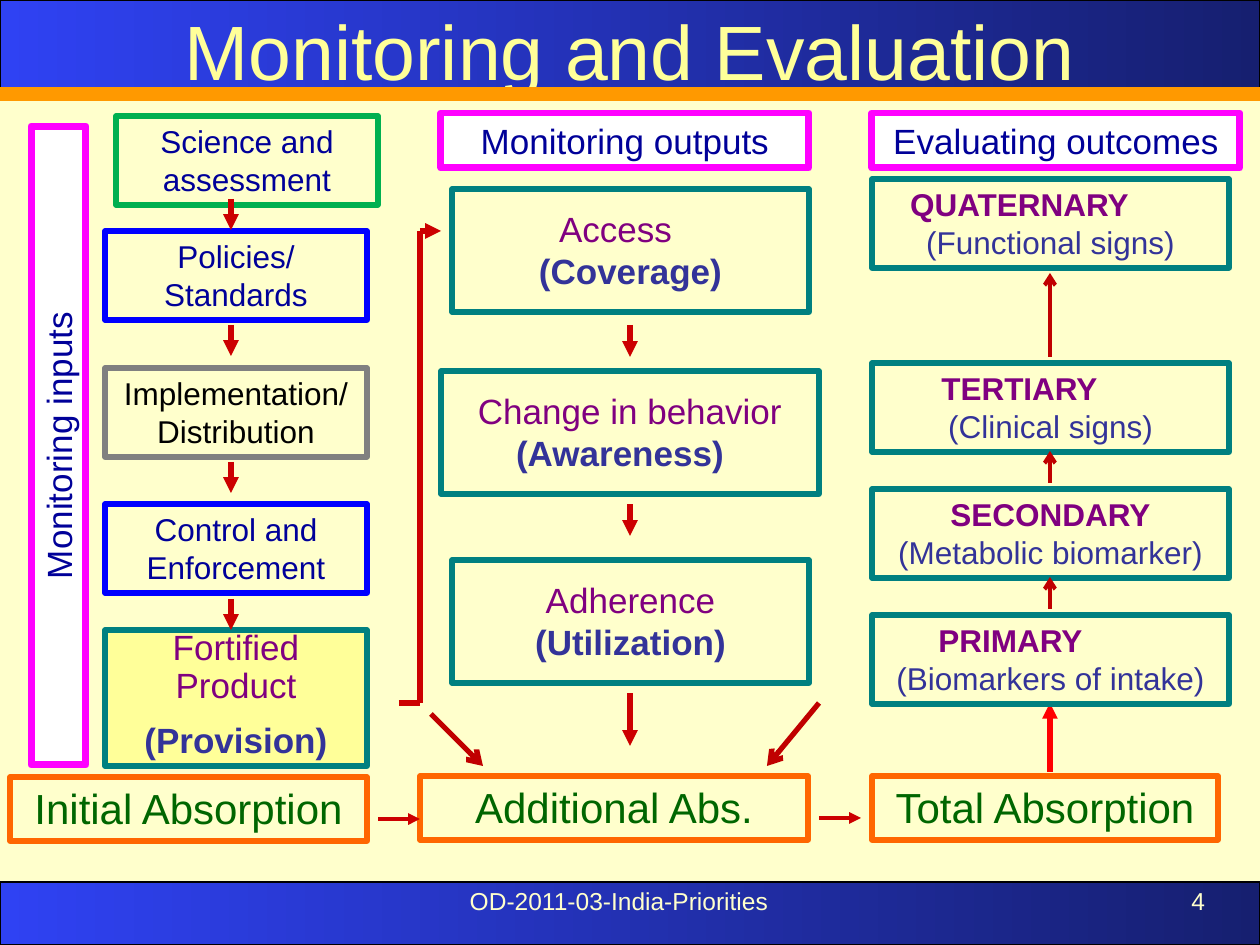
from lxml import etree
from pptx import Presentation
from pptx.dml.color import RGBColor
from pptx.enum.shapes import MSO_CONNECTOR, MSO_SHAPE
from pptx.enum.text import MSO_ANCHOR, PP_ALIGN
from pptx.oxml.ns import qn
from pptx.util import Pt

EMU_PER_PX = 914400 / 126
FONT = "Arial"
COLORS = {
    "cream": "FFFFCC", "yellow": "FFFF99", "white": "FFFFFF", "black": "000000",
    "band_start": "2F42F3", "band_end": "161F70", "rule": "FF9900",
    "orange": "FF6600", "dark_green": "006600", "green": "00B050",
    "teal": "008080", "purple": "800080", "indigo": "333399",
    "magenta": "FF00FF", "navy": "000099", "blue": "0000FF", "gray": "808080",
    "red": "CC0000", "dark_red": "C00000", "bright_red": "FF0000",
}


def px(value):
    return round(value * EMU_PER_PX)


def rgb(name):
    return RGBColor.from_string(COLORS[name])


def add_para(tf, text, size=20, color="navy", bold=False, align=PP_ALIGN.CENTER,
             shift=0, before=0, spacing=None):
    p = tf.paragraphs[0]
    if p.runs:
        p = tf.add_paragraph()
        p.space_before = Pt(before)
    p.alignment = align
    if spacing:
        p.line_spacing = spacing
    p._p.get_or_add_pPr().set("marR", str(px(2 * shift)))
    r = p.add_run()
    r.text = text
    r.font.name = FONT
    r.font.size = Pt(size)
    r.font.bold = bold
    r.font.color.rgb = rgb(color)


def set_frame(tf, inset=6, anchor=MSO_ANCHOR.TOP):
    tf.word_wrap = True
    tf.vertical_anchor = anchor
    tf.margin_left = tf.margin_right = px(13)
    tf.margin_top = tf.margin_bottom = px(inset)


def add_label(s, box, text, anchor=MSO_ANCHOR.TOP, **fmt):
    sp = s.shapes.add_textbox(*map(px, box))
    set_frame(sp.text_frame, anchor=anchor)
    add_para(sp.text_frame, text, **fmt)


def add_box(s, box, line, paras, fill=None, weight=3, inset=6, rotation=0):
    sp = s.shapes.add_shape(MSO_SHAPE.RECTANGLE, *map(px, box))
    sp.shadow.inherit = False
    sp.rotation = rotation
    sp.line.color.rgb = rgb(line)
    sp.line.width = Pt(weight)
    if fill:
        sp.fill.solid()
        sp.fill.fore_color.rgb = rgb(fill)
    else:
        sp.fill.background()
    set_frame(sp.text_frame, inset)
    for text, fmt in paras:
        add_para(sp.text_frame, text, **fmt)


def add_band(s, top, height):
    sp = s.shapes.add_shape(MSO_SHAPE.RECTANGLE, 0, px(top), px(1260), px(height))
    sp.shadow.inherit = False
    sp.fill.gradient()
    sp.fill.gradient_angle = 0
    for stop, name in zip(sp.fill.gradient_stops, ("band_start", "band_end")):
        stop.color.rgb = rgb(name)
    sp.line.color.rgb = rgb("black")
    sp.line.width = Pt(0.75)


def add_line(s, x1, y1, x2, y2, color="red", weight=3, head=None):
    cx = s.shapes.add_connector(MSO_CONNECTOR.STRAIGHT, *map(px, (x1, y1, x2, y2)))
    cx.line.color.rgb = rgb(color)
    cx.line.width = Pt(weight)
    if head:
        etree.SubElement(cx.line._get_or_add_ln(), qn("a:tailEnd"), type=head)
    etree.SubElement(cx._element.spPr, qn("a:effectLst"))


def add_header(s, box, text, rotation=0):
    add_box(s, box, "magenta", [(text, {})], fill="white", weight=4, rotation=rotation)


def add_inputs(s):
    add_header(s, (-261, 418, 639, 55), "Monitoring inputs", rotation=270)
    for left, top, line, color, text in (
        (116, 116, "green", "navy", "Science and assessment"),
        (105, 231, "blue", "navy", "Policies/ Standards"),
        (105, 368, "gray", "black", "Implementation/ Distribution"),
        (105, 504, "blue", "navy", "Control and Enforcement"),
    ):
        add_box(s, (left, top, 262, 89), line, [(text, dict(size=18, color=color))])
    add_box(s, (105, 630, 262, 136), "teal", [
        ("Fortified Product", dict(color="purple", spacing=0.9)),
        ("(Provision)", dict(color="indigo", bold=True, spacing=0.9, before=10)),
    ], fill="yellow", inset=0)
    for top in (199, 325, 462, 599):
        add_line(s, 231, top, 231, top + 31, head="triangle")


def add_outputs(s):
    add_header(s, (441, 113, 368, 55), "Monitoring outputs")
    for left, top, width, name, name_shift, measure, measure_shift in (
        (452, 189, 357, "Access", 15, "(Coverage)", 0),
        (441, 371, 378, "Change in behavior", 0, "(Awareness)", 10),
        (452, 560, 357, "Adherence", 0, "(Utilization)", 0),
    ):
        add_box(s, (left, top, width, 123), "teal", [
            (name, dict(color="purple", shift=name_shift)),
            (measure, dict(color="indigo", bold=True, shift=measure_shift)),
        ], inset=19)
    for top, bottom in ((325, 357), (504, 536), (693, 746)):
        add_line(s, 630, top, 630, bottom, head="triangle")
    add_line(s, 399, 703, 420, 703)
    add_line(s, 420, 703, 420, 231)
    add_line(s, 420, 231, 441, 231, head="triangle")


def add_outcomes(s):
    add_header(s, (872, 113, 368, 55), "Evaluating outcomes")
    for top, level, shift, sign in (
        (179, "QUATERNARY", 31, "(Functional signs)"),
        (363, "TERTIARY", 31, "(Clinical signs)"),
        (489, "SECONDARY", 0, "(Metabolic biomarker)"),
        (615, "PRIMARY", 40, "(Biomarkers of intake)"),
    ):
        add_box(s, (872, top, 357, 89), "teal", [
            (level, dict(size=18, color="purple", bold=True, shift=shift)),
            (sign, dict(size=18, color="indigo")),
        ])
    for bottom, top in ((357, 273), (483, 451), (609, 577)):
        add_line(s, 1050, bottom, 1050, top, "dark_red", 2.25, "arrow")


def add_absorption(s):
    for left, top, width, text in (
        (10, 777, 357, "Initial Absorption"),
        (420, 776, 388, "Additional Abs."),
        (872, 776, 346, "Total Absorption"),
    ):
        add_box(s, (left, top, width, 64), "orange",
                [(text, dict(size=24, color="dark_green"))])
    add_line(s, 378, 819, 420, 819, weight=2.25, head="triangle")
    add_line(s, 819, 818, 861, 818, weight=2.25, head="triangle")
    add_line(s, 1050, 772, 1050, 703, "bright_red", head="triangle")
    add_line(s, 431, 714, 483, 766, "dark_red", head="arrow")
    add_line(s, 819, 703, 767, 766, "dark_red", head="arrow")


def main():
    prs = Presentation()
    prs.slide_width, prs.slide_height = px(1260), px(945)
    s = prs.slides.add_slide(prs.slide_layouts[6])
    s.background.fill.solid()
    s.background.fill.fore_color.rgb = rgb("cream")
    add_band(s, 0, 94)
    add_band(s, 882, 63)
    add_label(s, (388, 880, 462, 65), "OD-2011-03-India-Priorities", size=14, color="cream")
    add_label(s, (924, 880, 294, 65), "4", size=14, color="cream", align=PP_ALIGN.RIGHT)
    add_label(s, (0, 10, 1260, 79), "Monitoring and Evaluation",
              anchor=MSO_ANCHOR.MIDDLE, size=44, color="yellow")
    add_line(s, 0, 94, 1260, 94, "rule", 8)
    add_absorption(s)
    add_outputs(s)
    add_inputs(s)
    add_outcomes(s)
    prs.save("out.pptx")


if __name__ == "__main__":
    main()
